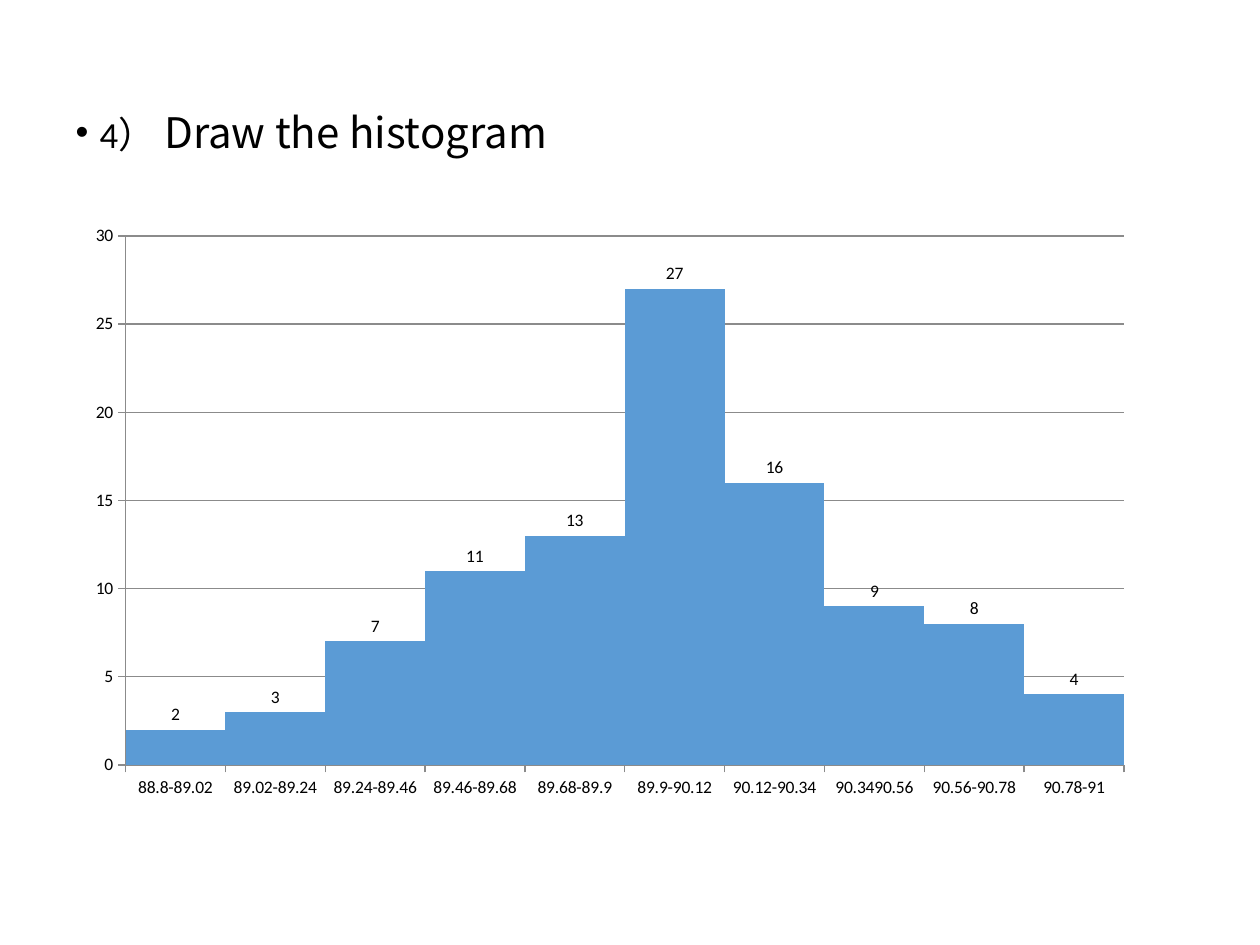
from pptx import Presentation
from pptx.chart.data import CategoryChartData
from pptx.dml.color import RGBColor
from pptx.enum.chart import XL_CHART_TYPE, XL_LABEL_POSITION, XL_TICK_MARK
from pptx.enum.text import MSO_AUTO_SIZE
from pptx.util import Inches, Pt

COLUMN = XL_CHART_TYPE.COLUMN_CLUSTERED
OUTER = XL_LABEL_POSITION.OUTSIDE_END
OUT, NONE = XL_TICK_MARK.OUTSIDE, XL_TICK_MARK.NONE
NO_FIT = MSO_AUTO_SIZE.NONE

COUNTS = {
    "88.8-89.02": 2,
    "89.02-89.24": 3,
    "89.24-89.46": 7,
    "89.46-89.68": 11,
    "89.68-89.9": 13,
    "89.9-90.12": 27,
    "90.12-90.34": 16,
    "90.3490.56": 9,
    "90.56-90.78": 8,
    "90.78-91": 4,
}


def color(code):
    return RGBColor.from_string(code)


def apply(item, values):
    for name, value in values.items():
        setattr(item, name, value)


class Deck:
    ink, bar, grid = "000000", "5B9BD5", "8B8B8B"
    latin, wide = "Calibri", "Noto Sans CJK JP"

    def __init__(self):
        self.file = Presentation()
        apply(self.file, {"slide_width": Inches(10), "slide_height": Inches(7.5)})

    def start(self):
        self.slide = self.file.slides.add_slide(self.file.slide_layouts[1])
        title = self.slide.shapes.title.element
        title.getparent().remove(title)

    def font(self, font, name, size):
        apply(font, {"name": name, "size": Pt(size)})
        font.color.rgb = color(self.ink)

    def body(self, box, runs):
        holder = self.slide.placeholders[1]
        apply(holder, dict(zip(("left", "top", "width", "height"), map(Inches, box))))
        frame = holder.text_frame
        apply(frame, {"word_wrap": True, "auto_size": NO_FIT})
        para = frame.paragraphs[0]
        apply(para, {"line_spacing": 0.9, "space_before": Pt(7.5)})
        props = para._p.get_or_add_pPr()
        props.set("marL", str(Inches(0.19)))
        props.set("indent", str(-Inches(0.19)))
        for text, name, size in runs:
            run = para.add_run()
            run.text = text
            self.font(run.font, name, size)

    def chart(self, box, counts):
        data = CategoryChartData()
        data.categories = list(counts)
        data.add_series("Series 1", list(counts.values()))
        chart = self.slide.shapes.add_chart(COLUMN, *map(Inches, box), data).chart
        apply(chart, {"has_legend": False, "has_title": False})
        self.font(chart.font, self.latin, 10)
        plot = chart.plots[0]
        apply(plot, {"gap_width": 0, "vary_by_categories": False, "has_data_labels": True})
        apply(plot.data_labels, {"show_value": True, "position": OUTER})
        fill = plot.series[0].format.fill
        fill.solid()
        fill.fore_color.rgb = color(self.bar)
        value = chart.value_axis
        apply(value, {"minimum_scale": 0, "maximum_scale": 30, "major_unit": 5,
                      "has_major_gridlines": True})
        for axis in (chart.category_axis, value):
            apply(axis, {"major_tick_mark": OUT, "minor_tick_mark": NONE})
            self.line(axis.format.line)
        self.line(value.major_gridlines.format.line)

    def line(self, line):
        line.color.rgb = color(self.grid)
        line.width = Pt(0.75)


def main():
    deck = Deck()
    deck.start()
    deck.body((0.5, 0.84, 9.07, 5.86),
              [("4）", deck.latin, 21), (" Draw the histogram", deck.wide, 24)])
    deck.chart((0.59, 1.7, 8.5, 4.72), COUNTS)
    deck.file.save("out.pptx")


if __name__ == "__main__":
    main()
